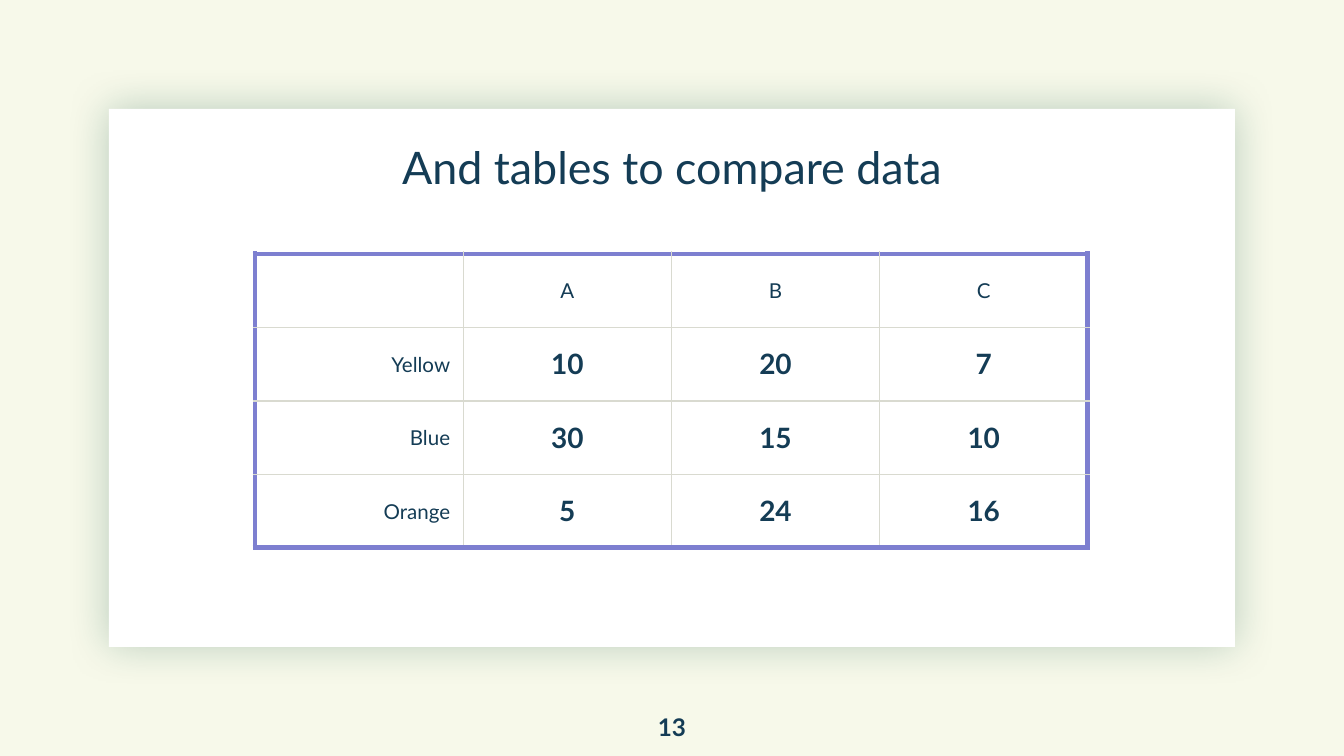
import pptx
import pptx.util
import pptx.oxml
import pptx.oxml.ns
from pptx.dml.color import RGBColor
from pptx.enum.shapes import MSO_SHAPE
from pptx.enum.text import MSO_ANCHOR, MSO_AUTO_SIZE, PP_ALIGN

SCALE = 9144000 / 1344  # EMU in one px
CREAM = RGBColor(0xF7, 0xF9, 0xEA)
WHITE = RGBColor(0xFF, 0xFF, 0xFF)
NAVY = RGBColor(0x14, 0x3C, 0x55)
VIOLET = RGBColor(0x7D, 0x7F, 0xD0)
GREY = RGBColor(0xD9, 0xDA, 0xD0)
GREEN = RGBColor(0x05, 0x4C, 0x3A)
FONT = "Lato"
ROWS = [
    ["", "A", "B", "C"],
    ["Yellow", "10", "20", "7"],
    ["Blue", "30", "15", "10"],
    ["Orange", "5", "24", "16"],
]


def px(size):
    return pptx.util.Emu(round(size * SCALE))


def box(*sizes):
    return [px(size) for size in sizes]


def write(frame, text, size, bold=False, align=PP_ALIGN.CENTER, space=None):
    para = frame.paragraphs[0]
    para.alignment = align
    para.line_spacing = space
    run = para.add_run()
    run.text = text
    run.font.name = FONT
    run.font.size = pptx.util.Pt(size)
    run.font.bold = bold
    run.font.color.rgb = NAVY


def set_frame(frame, anchor):
    frame.word_wrap = True
    frame.auto_size = MSO_AUTO_SIZE.NONE
    frame.vertical_anchor = anchor
    frame.margin_left = frame.margin_right = 0
    frame.margin_top = frame.margin_bottom = 0


def add_card(slide):
    card = slide.shapes.add_shape(MSO_SHAPE.RECTANGLE, *box(109, 109, 1126, 538))
    card.fill.solid()
    card.fill.fore_color.rgb = WHITE
    card.line.fill.background()
    # Soft glow on all sides
    card.shadow.inherit = False
    glow = pptx.oxml.parse_xml(
        f'<a:outerShdw {pptx.oxml.ns.nsdecls("a")} blurRad="{pptx.util.Pt(22.5)}" '
        f'dist="0" dir="0" algn="ctr" rotWithShape="0"><a:srgbClr val="{GREEN}">'
        '<a:alpha val="25000"/></a:srgbClr></a:outerShdw>')
    card.element.spPr.find(pptx.oxml.ns.qn("a:effectLst")).append(glow)
    # Keep the card behind the title
    slide.shapes.title.element.addprevious(card.element)


def add_title(slide, text):
    title = slide.shapes.title
    title.left, title.top, title.width, title.height = box(159, 144, 1026, 50)
    set_frame(title.text_frame, MSO_ANCHOR.BOTTOM)
    write(title.text_frame, text, 24, space=0.9)


def add_edge(cell, side, outer):
    color, width = (VIOLET, 3) if outer else (GREY, 0.75)
    edge = pptx.oxml.parse_xml(
        f'<a:ln{side} {pptx.oxml.ns.nsdecls("a")} w="{pptx.util.Pt(width)}">'
        f'<a:solidFill><a:srgbClr val="{color}"/></a:solidFill></a:ln{side}>')
    cell._tc.get_or_add_tcPr().append(edge)


def add_grid(slide, rows):
    last_row, last_col = len(rows) - 1, len(rows[0]) - 1
    table = slide.shapes.add_table(
        len(rows), len(rows[0]), *box(255, 254, 833, 294)).table
    table.first_row = table.horz_banding = False
    for r, row in enumerate(rows):
        for c, text in enumerate(row):
            cell = table.cell(r, c)
            cell.vertical_anchor = MSO_ANCHOR.MIDDLE
            cell.margin_left = cell.margin_right = px(13)
            cell.margin_top = cell.margin_bottom = px(9)
            # Violet frame outside, grey lines inside
            add_edge(cell, "L", c == 0)
            add_edge(cell, "R", c == last_col)
            add_edge(cell, "T", r == 0)
            add_edge(cell, "B", r == last_row)
            cell.fill.background()
            value = r > 0 and c > 0
            if text:
                write(cell.text_frame, text, 15 if value else 11, bold=value,
                      align=PP_ALIGN.CENTER if c else PP_ALIGN.RIGHT)


def add_number(slide, text):
    frame = slide.shapes.add_textbox(*box(632, 698, 80, 58)).text_frame
    set_frame(frame, MSO_ANCHOR.MIDDLE)
    write(frame, text, 13, bold=True)


def main():
    deck = pptx.Presentation()
    deck.slide_width, deck.slide_height = box(1344, 756)
    slide = deck.slides.add_slide(deck.slide_layouts[5])
    slide.background.fill.solid()
    slide.background.fill.fore_color.rgb = CREAM
    add_card(slide)
    add_title(slide, "And tables to compare data")
    add_grid(slide, ROWS)
    add_number(slide, "13")
    deck.save("out.pptx")


if __name__ == "__main__":
    main()
